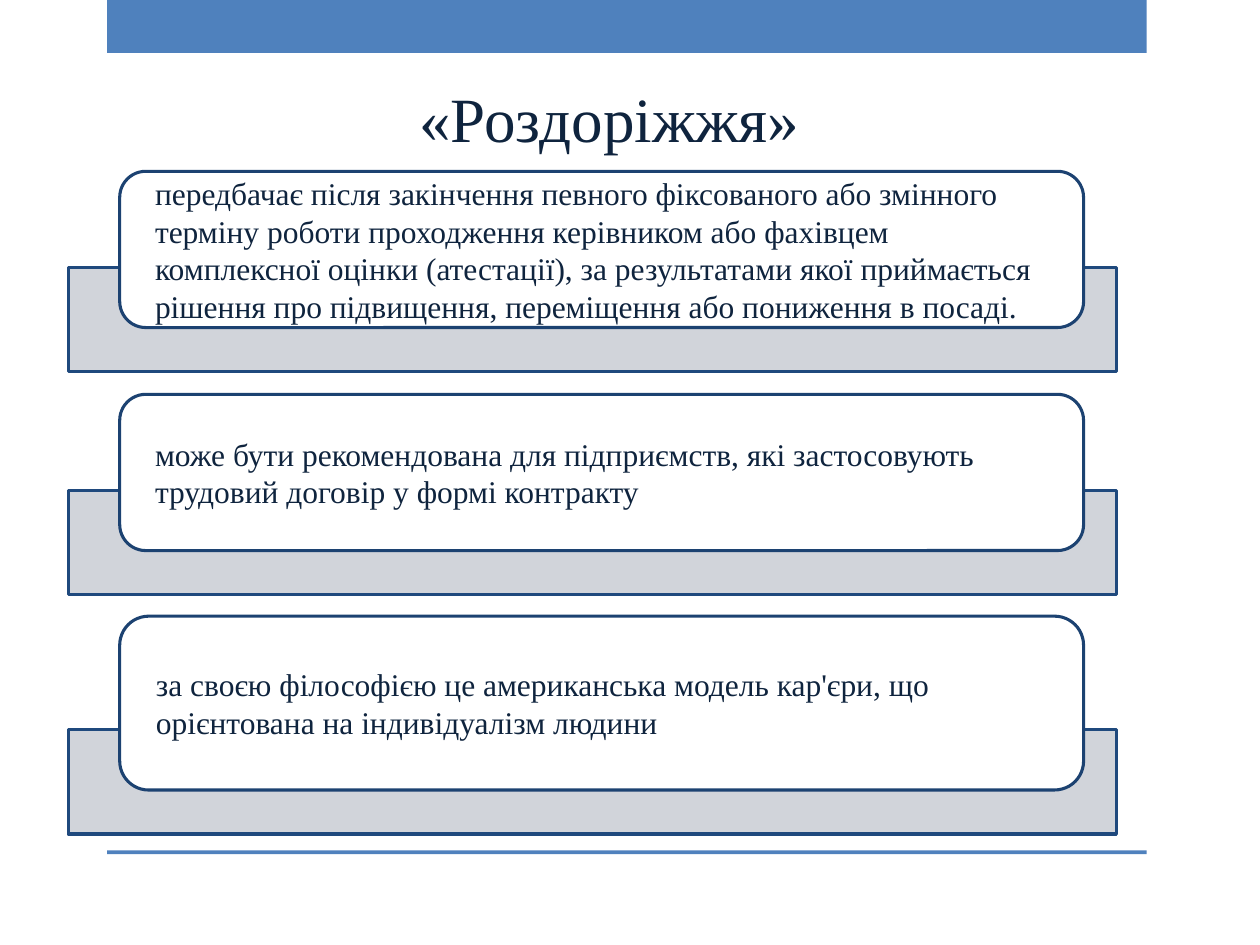
from lxml import etree
from pptx import Presentation
from pptx.dml.color import RGBColor
from pptx.enum.shapes import MSO_SHAPE as Shape
from pptx.enum.text import MSO_ANCHOR as Anchor, MSO_AUTO_SIZE as AutoSize, PP_ALIGN as Align
from pptx.oxml.ns import qn
from pptx.util import Inches, Pt

ACCENT = RGBColor(0x4F, 0x81, 0xBD)
INK = RGBColor(0x0F, 0x24, 0x3E)
WHITE = RGBColor(0xFF, 0xFF, 0xFF)
BAND_FILL = RGBColor(0xCD, 0xD0, 0xD7)
BAND_LINE = RGBColor(0x1F, 0x49, 0x7D)
CARD_LINE = RGBColor(0x1C, 0x42, 0x71)

TEXT_FORMAT = {"name": "Times New Roman", "color": INK}
CARD_FRAME = {
    "word_wrap": True,
    "vertical_anchor": Anchor.MIDDLE,
    "margin_left": Inches(0.22),
    "margin_right": Inches(0.22),
    "margin_top": 0,
    "margin_bottom": 0,
}
BAND_OFFSET = 0.48
BAND_HEIGHT = 0.83

POINTS = [
    (1.36, 1.24, "передбачає після закінчення певного фіксованого або змінного "
     "терміну роботи проходження керівником або фахівцем комплексної оцінки "
     "(атестації), за результатами якої приймається рішення про підвищення, "
     "переміщення або пониження в посаді."),
    (3.13, 1.24, "може бути рекомендована для підприємств, які застосовують "
     "трудовий договір у формі контракту"),
    (4.89, 1.38, "за своєю філософією це американська модель кар'єри, що "
     "орієнтована на індивідуалізм людини"),
]


def apply_format(target, values):
    for name, value in values.items():
        if name == "color":
            target.color.rgb = value
        else:
            setattr(target, name, value)


def write_text(frame, text, size, align):
    paragraph = frame.paragraphs[0]
    paragraph.text = text
    paragraph.alignment = align
    apply_format(paragraph.runs[0].font, TEXT_FORMAT | {"size": Pt(size)})


def add_box(slide, kind, place, fill, outline=None):
    box = slide.shapes.add_shape(kind, *map(Inches, place))
    box.shadow.inherit = False
    box.fill.solid()
    box.fill.fore_color.rgb = fill
    if outline is None:
        box.line.fill.background()
    else:
        apply_format(box.line, {"color": outline, "width": Pt(1.75)})
    return box


def set_opacity(box, percent):
    color = next(box.fill._xPr.iter(qn("a:srgbClr")))
    etree.SubElement(color, qn("a:alpha"), val=str(percent * 1000))


def add_title(slide, text):
    title = slide.shapes.add_textbox(*map(Inches, (3.23, 0.58, 3.38, 0.71)))
    apply_format(title.text_frame,
                 {"word_wrap": False, "auto_size": AutoSize.SHAPE_TO_FIT_TEXT})
    write_text(title.text_frame, text, 36, Align.LEFT)


def add_point(slide, top, height, text):
    band_top = top + height - BAND_OFFSET
    band = add_box(slide, Shape.RECTANGLE, (0.54, band_top, 8.32, BAND_HEIGHT),
                   BAND_FILL, BAND_LINE)
    set_opacity(band, 90)
    card = add_box(slide, Shape.ROUNDED_RECTANGLE, (0.95, top, 7.65, height),
                   WHITE, CARD_LINE)
    apply_format(card.text_frame, CARD_FRAME)
    write_text(card.text_frame, text, 18, Align.LEFT)


def main():
    deck = Presentation()
    deck.slide_width, deck.slide_height = Inches(10), Inches(7.5)
    slide = deck.slides.add_slide(deck.slide_layouts[6])
    for top, height in ((0, 0.42), (6.75, 0.03)):
        add_box(slide, Shape.RECTANGLE, (0.85, top, 8.25, height), ACCENT)
    add_title(slide, "«Роздоріжжя»")
    for top, height, text in POINTS:
        add_point(slide, top, height, text)
    deck.save("out.pptx")


if __name__ == "__main__":
    main()
